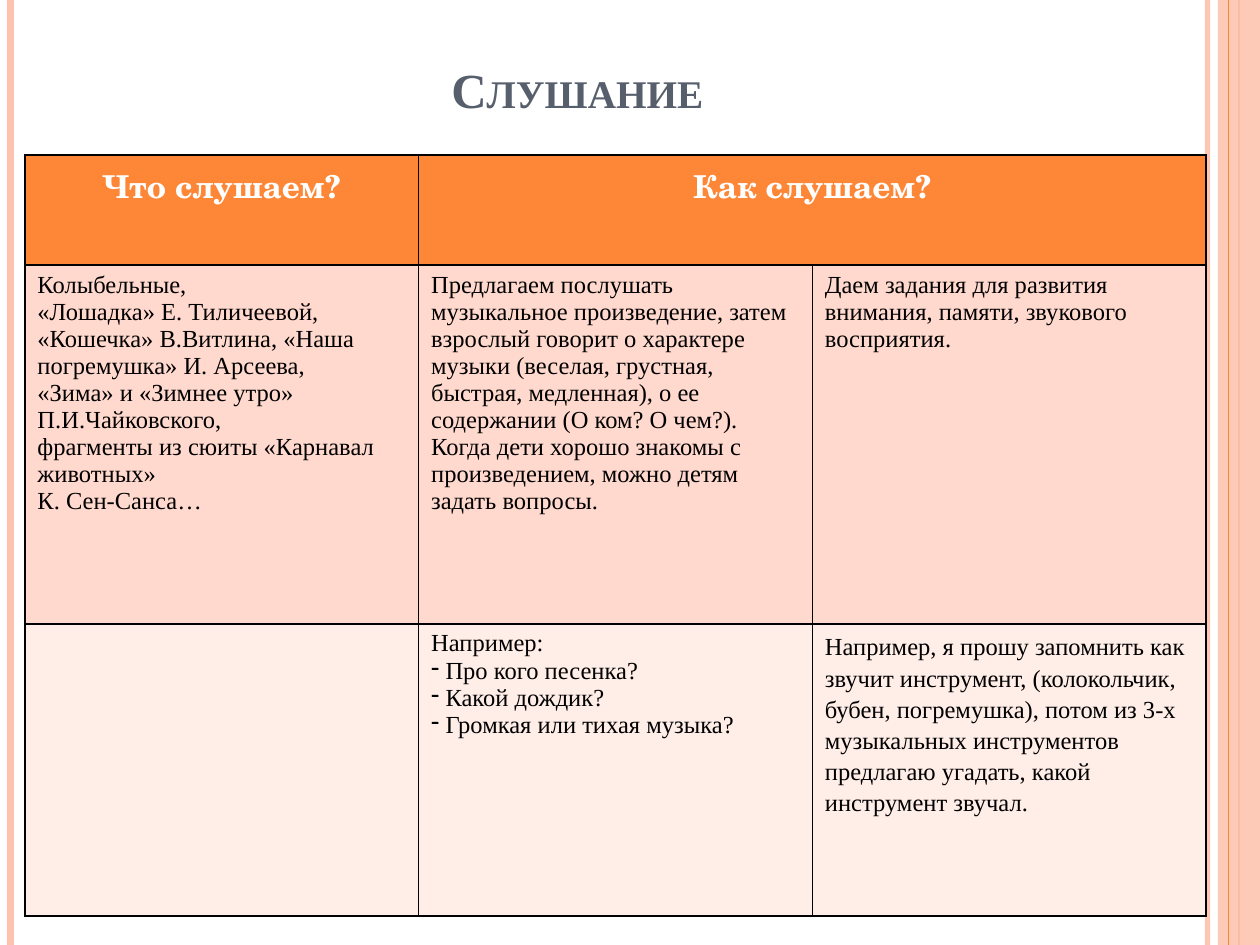
from lxml import etree
from pptx import Presentation
from pptx import util as u
from pptx.dml.color import RGBColor
from pptx.enum import shapes, text
from pptx.oxml.ns import qn

ORANGE = RGBColor(0xFE, 0x86, 0x37)
PEACH = RGBColor(0xFE, 0xC3, 0xAE)
BAND_DARK = RGBColor(0xFF, 0xD9, 0xCE)
BAND_LIGHT = RGBColor(0xFF, 0xED, 0xE8)
SLATE = RGBColor(0x57, 0x5F, 0x6D)
WHITE = RGBColor(0xFF, 0xFF, 0xFF)
BLACK = RGBColor(0, 0, 0)
SERIF, HEAD_FONT = "Times New Roman", "TeX Gyre Schola"
LEFT, CENTER = text.PP_ALIGN.LEFT, text.PP_ALIGN.CENTER
WIDTH, HEIGHT = 720, 540

HEADERS = ["Что слушаем?", "Как слушаем?"]
BODY = [
    ["Колыбельные,\n"
     "«Лошадка» Е. Тиличеевой, «Кошечка» В.Витлина, «Наша погремушка» И. Арсеева,\n"
     "«Зима» и «Зимнее утро» П.И.Чайковского,\n"
     "фрагменты из сюиты «Карнавал животных»\n"
     "К. Сен-Санса…",
     "Предлагаем послушать музыкальное произведение, затем взрослый говорит о характере "
     "музыки (веселая, грустная, быстрая, медленная), о ее содержании (О ком? О чем?).\n"
     "Когда дети хорошо знакомы с произведением, можно детям задать вопросы.",
     "Даем задания для развития внимания, памяти, звукового восприятия."],
    ["",
     "Например:\n- Про кого песенка?\n- Какой дождик?\n- Громкая или тихая музыка?",
     "Например, я прошу запомнить как звучит инструмент, (колокольчик, бубен, погремушка), "
     "потом из 3-х музыкальных инструментов предлагаю угадать, какой инструмент звучал."],
]


def write(tf, content, size=14, font=SERIF, color=BLACK, bold=False, align=LEFT,
          spacing=None, after=None, small_caps=False):
    """Fill a text frame, one paragraph per line; lines starting with "- " become bullets."""
    tf.word_wrap = True
    for i, line in enumerate(content.split("\n")):
        p = tf.add_paragraph() if i else tf.paragraphs[0]
        if line.startswith("- "):
            line = line[2:]
            pPr = p._p.get_or_add_pPr()
            indent = u.Pt(8.2)
            pPr.set("marL", str(indent))
            pPr.set("indent", str(-indent))
            etree.SubElement(pPr, qn("a:buChar")).set("char", "-")
        p.alignment = align
        if spacing:
            p.line_spacing = spacing
        if after:
            p.space_after = u.Pt(after)
        r = p.add_run()
        r.text = line
        r.font.size, r.font.name, r.font.bold = u.Pt(size), font, bold
        r.font.color.rgb = color
        if small_caps:
            r.font._element.set("cap", "small")


def set_alpha(fill, percent):
    clr = fill._xPr.find(qn("a:solidFill"))[0]
    etree.SubElement(clr, qn("a:alpha")).set("val", str(percent * 1000))


def add_borders(cell, width=1):
    tcPr = cell._tc.get_or_add_tcPr()
    for side in ("lnL", "lnR", "lnT", "lnB"):
        ln = etree.SubElement(tcPr, qn(f"a:{side}"), w=str(u.Pt(width)))
        fill = etree.SubElement(ln, qn("a:solidFill"))
        etree.SubElement(fill, qn("a:srgbClr")).set("val", str(BLACK))


class SlideBuilder:
    """Holds the current slide and draws each kind of element, in points."""

    def __init__(self, s):
        self.s = s

    def vertical_line(self, x, color, width, alpha=None):
        sp = self.s.shapes.add_connector(shapes.MSO_CONNECTOR.STRAIGHT,
                                         u.Pt(x), 0, u.Pt(x), u.Pt(HEIGHT))
        sp.line.color.rgb = color
        sp.line.width = u.Pt(width)
        if alpha:
            set_alpha(sp.line.fill, alpha)
        etree.SubElement(sp._element.spPr, qn("a:effectLst"))

    def side_band(self, x, color, alpha):
        sp = self.s.shapes.add_shape(shapes.MSO_SHAPE.RECTANGLE, u.Pt(x), 0,
                                     u.Pt(WIDTH - x), u.Pt(HEIGHT))
        sp.shadow.inherit = False
        sp.fill.solid()
        sp.fill.fore_color.rgb = color
        set_alpha(sp.fill, alpha)
        sp.line.fill.background()

    def title(self, content, x, y, w, h):
        sp = self.s.shapes.title
        sp.left, sp.top, sp.width, sp.height = map(u.Pt, (x, y, w, h))
        tf = sp.text_frame
        tf.auto_size = text.MSO_AUTO_SIZE.NONE
        tf.vertical_anchor = text.MSO_ANCHOR.BOTTOM
        write(tf, content, size=28, color=SLATE, bold=True, align=CENTER, small_caps=True)

    def table(self, x, y, col_width, row_heights, headers, body):
        cols = len(body[0])
        table = self.s.shapes.add_table(len(row_heights), cols, u.Pt(x), u.Pt(y),
                                        u.Pt(col_width * cols), u.Pt(sum(row_heights))).table
        for row, height in zip(table.rows, row_heights):
            row.height = u.Pt(height)
        for row, color in zip(table.rows, (ORANGE, BAND_DARK, BAND_LIGHT)):
            for cell in row.cells:
                add_borders(cell)
                cell.fill.solid()
                cell.fill.fore_color.rgb = color
        table.cell(0, 1).merge(table.cell(0, cols - 1))
        for j, content in enumerate(headers):
            write(table.cell(0, j).text_frame, content, size=18, font=HEAD_FONT,
                  color=WHITE, bold=True, align=CENTER)
        for i, contents in enumerate(body, 1):
            for j, content in enumerate(contents):
                loose = i == len(body) and j == cols - 1
                fmt = {"spacing": 1.15, "after": 10} if loose else {}
                if content:
                    write(table.cell(i, j).text_frame, content, **fmt)


def main():
    prs = Presentation()
    prs.slide_width, prs.slide_height = u.Pt(WIDTH), u.Pt(HEIGHT)
    b = SlideBuilder(prs.slides.add_slide(prs.slide_layouts[5]))
    b.vertical_line(690, PEACH, 3, alpha=93)
    b.vertical_line(6, PEACH, 4.5)
    b.vertical_line(708, ORANGE, 1.5)
    b.side_band(696, PEACH, 87)
    b.vertical_line(702, ORANGE, 0.75)
    b.title("Слушание", 36, 21.6, 588, 49.7)
    b.table(14.2, 88.5, 225, [63, 205, 167], HEADERS, BODY)
    prs.save("out.pptx")


if __name__ == "__main__":
    main()
